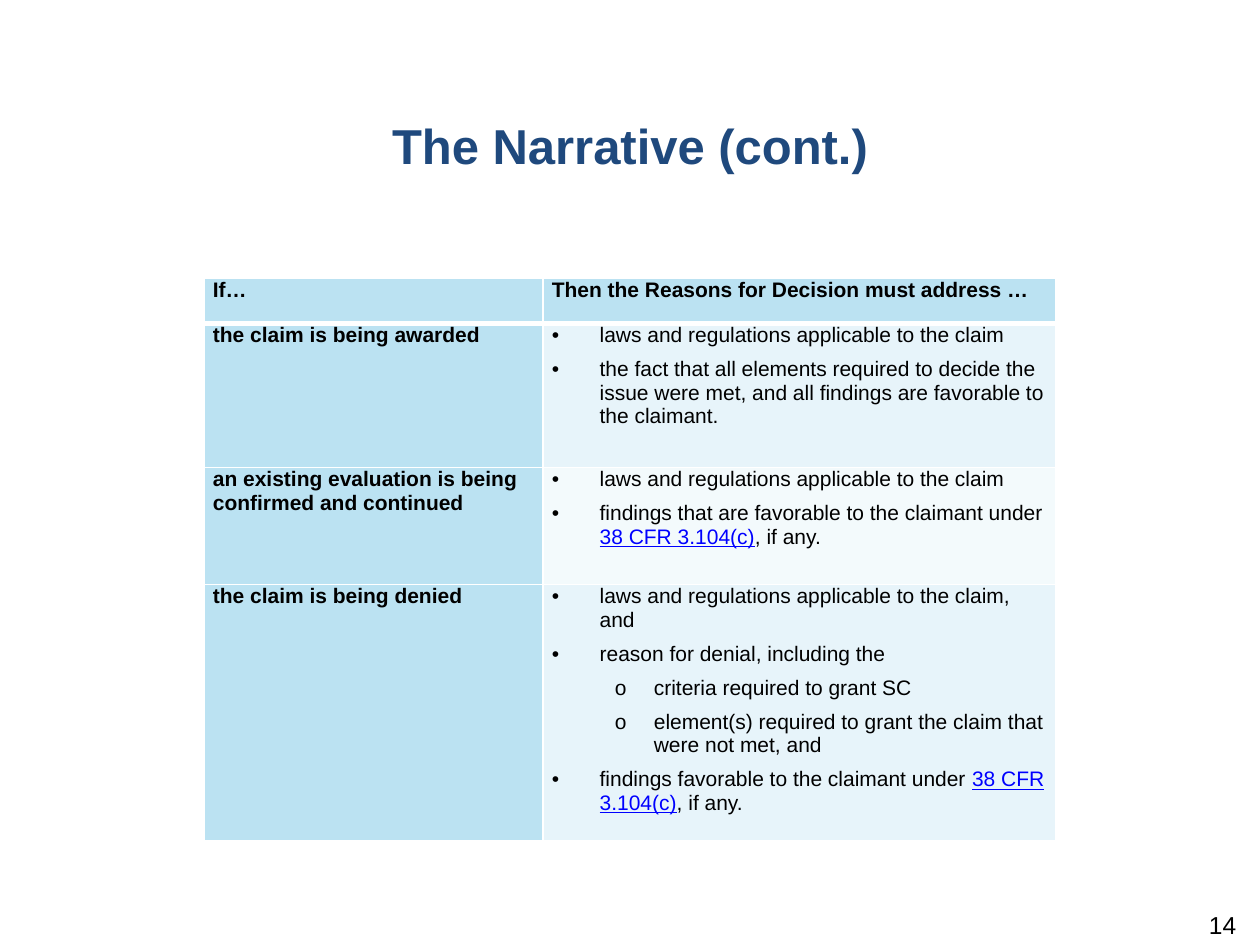
from dataclasses import dataclass
from typing import Any

import pptx
import pptx.dml.color
import pptx.enum.text
import pptx.oxml
import pptx.oxml.ns
import pptx.util
from pptx.util import Inches

NAVY, BLACK, WHITE, LINK_BLUE = "1F497D", "000000", "FFFFFF", "0000FF"
HEADER_BLUE, BAND_BLUE, BAND_PALE = "BBE2F2", "E7F4FA", "F3FAFC"
FONT = "Arial"
ALIGN = pptx.enum.text.PP_ALIGN
CITATION = "38 CFR 3.104(c)"
LAWS = "laws and regulations applicable to the claim"


@dataclass(frozen=True)
class BulletStyle:
    symbol: str
    level: int
    margin: float
    hanging: float
    tab: float


@dataclass(frozen=True)
class Point:
    text: str
    style: BulletStyle


@dataclass(frozen=True)
class Condition:
    label: str
    points: tuple[Point, ...]
    height: float
    fill: str


MAIN = BulletStyle("•", 0, 0.38, 0.38, 0.5)
SUB = BulletStyle("o", 1, 0.81, 0.31, 1)

HEADINGS = ("If…", "Then the Reasons for Decision must address …")
HEADING_HEIGHT = 0.36
COLUMN_WIDTHS = (2.69, 4.07)
CONDITIONS = (
    Condition("the claim is being awarded", (
        Point(LAWS, MAIN),
        Point("the fact that all elements required to decide the issue were met, "
              "and all findings are favorable to the claimant.", MAIN),
    ), 1.14, BAND_BLUE),
    Condition("an existing evaluation is being confirmed and continued", (
        Point(LAWS, MAIN),
        Point(f"findings that are favorable to the claimant under {CITATION}, if any.", MAIN),
    ), 0.93, BAND_PALE),
    Condition("the claim is being denied", (
        Point(f"{LAWS}, and", MAIN),
        Point("reason for denial, including the", MAIN),
        Point("criteria required to grant SC", SUB),
        Point("element(s) required to grant the claim that were not met, and", SUB),
        Point(f"findings favorable to the claimant under {CITATION}, if any.", MAIN),
    ), 2.03, BAND_BLUE),
)


def rgb(color: str) -> pptx.dml.color.RGBColor:
    return pptx.dml.color.RGBColor.from_string(color)


def set_all(target: Any, values: dict[str, Any]) -> None:
    for name, value in values.items():
        setattr(target, name, value)


def add_run(paragraph: Any, text: str, size: float, color: str = BLACK, **formats: Any) -> None:
    run = paragraph.add_run()
    run.text = text
    set_all(run.font, {"name": FONT, "size": pptx.util.Pt(size), **formats})
    run.font.color.rgb = rgb(color)


def add_text(slide: Any, box: tuple[float, ...], text: str, align: Any,
             frame_values: dict[str, Any], **formats: Any) -> Any:
    frame = slide.shapes.add_textbox(*map(Inches, box)).text_frame
    set_all(frame, {"word_wrap": True, **frame_values})
    paragraph = frame.paragraphs[0]
    paragraph.alignment = align
    add_run(paragraph, text, **formats)
    return paragraph


def add_element(parent: Any, tag: str, **attributes: str) -> Any:
    element = pptx.oxml.parse_xml(f"<a:{tag} {pptx.oxml.ns.nsdecls('a')}/>")
    for name, value in attributes.items():
        element.set(name, value)
    parent.append(element)
    return element


def format_cell(cell: Any, fill: str, top: float = 1, bottom: float = 1) -> None:
    """Set margins, white borders (widths in points) and the fill."""
    set_all(cell, {"margin_left": Inches(0.07), "margin_right": Inches(0.07),
                   "margin_top": 0, "margin_bottom": 0})
    properties = cell._tc.get_or_add_tcPr()
    for side, width in {"L": 1, "R": 1, "T": top, "B": bottom}.items():
        line = add_element(properties, f"ln{side}", w=str(pptx.util.Pt(width)))
        add_element(add_element(line, "solidFill"), "srgbClr", val=WHITE)
    cell.fill.solid()
    cell.fill.fore_color.rgb = rgb(fill)


def write_label(cell: Any, text: str) -> None:
    add_run(cell.text_frame.paragraphs[0], text, 12, bold=True)


def apply_bullet(paragraph: Any, style: BulletStyle) -> None:
    paragraph.level = style.level
    properties = paragraph._p.get_or_add_pPr()
    properties.set("marL", str(Inches(style.margin)))
    properties.set("indent", str(-Inches(style.hanging)))
    add_element(properties, "buFont", typeface=FONT)
    add_element(properties, "buChar", char=style.symbol)
    tabs = add_element(properties, "tabLst")
    add_element(tabs, "tab", pos=str(Inches(style.tab)), algn="l")


def write_points(cell: Any, points: tuple[Point, ...]) -> None:
    frame = cell.text_frame
    for index, point in enumerate(points):
        paragraph = frame.add_paragraph() if index else frame.paragraphs[0]
        apply_bullet(paragraph, point.style)
        if index:
            paragraph.space_before = pptx.util.Pt(6)
        before, citation, after = point.text.partition(CITATION)
        add_run(paragraph, before, 12, bold=False)
        if citation:
            add_run(paragraph, citation, 12, LINK_BLUE, bold=False, underline=True)
            add_run(paragraph, after, 12, bold=False)


def add_conditions_table(slide: Any) -> None:
    heights = [HEADING_HEIGHT, *(condition.height for condition in CONDITIONS)]
    table = slide.shapes.add_table(
        len(heights), len(COLUMN_WIDTHS), Inches(1.62), Inches(2.21),
        Inches(sum(COLUMN_WIDTHS)), Inches(sum(heights))).table
    for column, width in zip(table.columns, COLUMN_WIDTHS):
        column.width = Inches(width)
    for row, height in zip(table.rows, heights):
        row.height = Inches(height)
    for column, heading in enumerate(HEADINGS):
        format_cell(table.cell(0, column), HEADER_BLUE, bottom=3)
        write_label(table.cell(0, column), heading)
    for row, condition in enumerate(CONDITIONS, start=1):
        label_cell, points_cell = table.cell(row, 0), table.cell(row, 1)
        top = 3 if row == 1 else 1
        format_cell(label_cell, HEADER_BLUE, top)
        format_cell(points_cell, condition.fill, top)
        write_label(label_cell, condition.label)
        write_points(points_cell, condition.points)


def main() -> None:
    deck = pptx.Presentation()
    set_all(deck, {"slide_width": Inches(10), "slide_height": Inches(7.5)})
    slide = deck.slides.add_slide(deck.slide_layouts[6])
    add_text(slide, (0, 0.87, 10, 1.19), "The Narrative (cont.)", ALIGN.CENTER, {},
             size=28, color=NAVY, bold=True)
    add_conditions_table(slide)
    page_number = add_text(slide, (7.58, 7.22, 2.33, 0.4), "14", ALIGN.RIGHT,
                           {"margin_top": 0}, size=14)
    page_number.space_after = pptx.util.Pt(6)
    deck.save("out.pptx")


if __name__ == "__main__":
    main()
